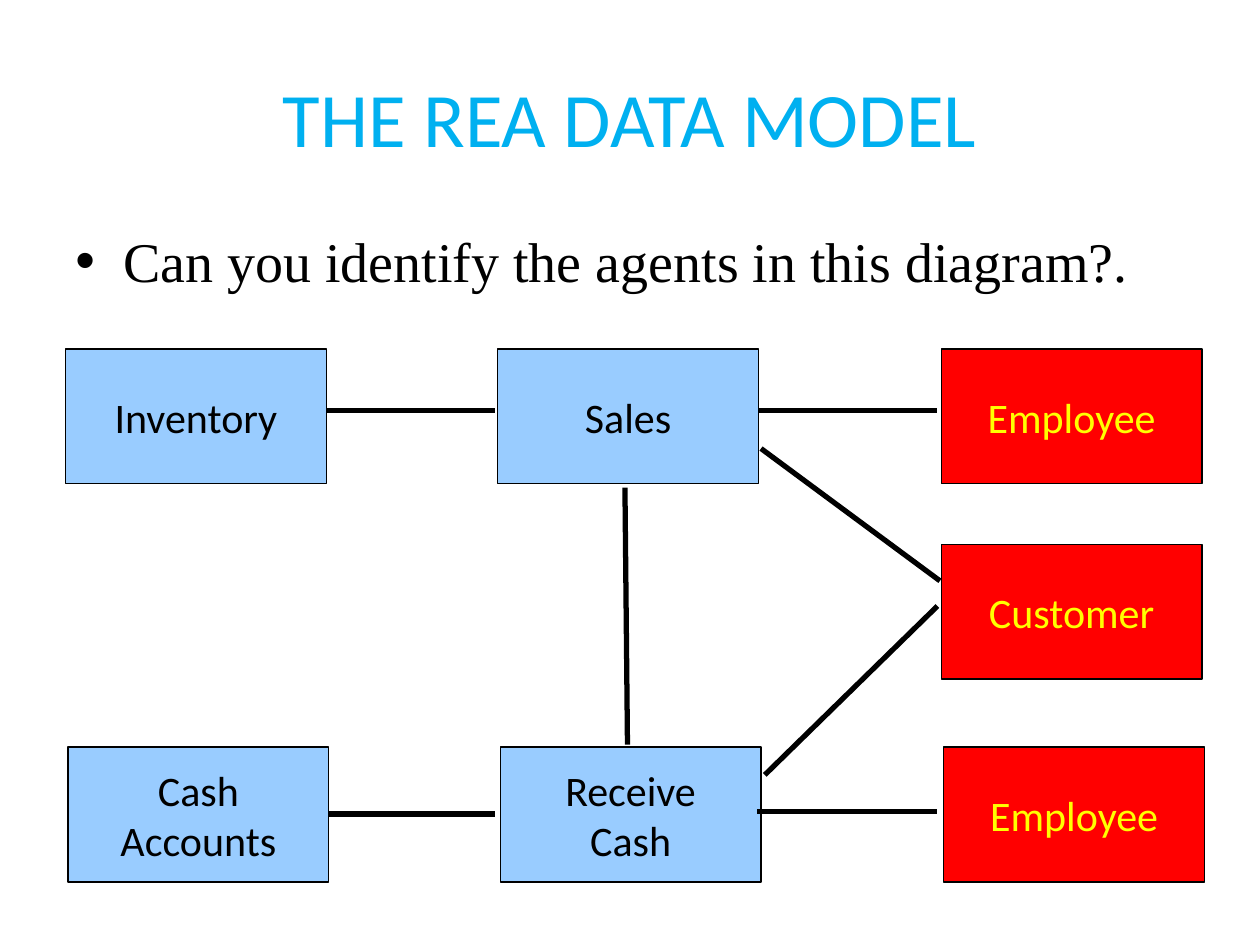
from lxml.etree import SubElement as Sub
from pptx import Presentation
from pptx.dml.color import RGBColor as RGB
from pptx.enum.shapes import MSO_CONNECTOR as Link, MSO_SHAPE as Form
from pptx.enum.text import MSO_ANCHOR as Anchor, PP_ALIGN as Align
from pptx.oxml.ns import qn
from pptx.util import Inches as In, Pt

INK = {"title": "00B0F0", "text": "000000", "line": "000000",
       "agent": "FF0000", "event": "99CCFF", "label": "FFFF00"}
COLS = [0.52, 3.95, 7.47]
ROWS = [2.77, 4.32, 5.93]
WIDE, HIGH = 2.07, 1.07
SHIFT = 0.02


def write(frame, text, size, font, ink, align):
    frame.text = text
    frame.vertical_anchor = Anchor.MIDDLE
    for para in frame.paragraphs:
        para.alignment = align
        for run in para.runs:
            run.font.size = Pt(size)
            run.font.name = font
            run.font.color.rgb = RGB.from_string(INK[ink])


deck = Presentation()
deck.slide_width, deck.slide_height = In(10), In(7.5)
slide = deck.slides.add_slide(deck.slide_layouts[6])
shapes = slide.shapes

head = shapes.add_textbox(In(0.5), In(0.3), In(9), In(1.25)).text_frame
head.word_wrap = True
write(head, "THE REA DATA MODEL", 44, "Calibri", "title", Align.CENTER)

body = shapes.add_textbox(In(0.5), In(1.75), In(9), In(0.76)).text_frame
body.word_wrap = True
write(body, "Can you identify the agents in this diagram?.", 32,
      "Times New Roman", "text", Align.LEFT)
body.vertical_anchor = Anchor.TOP
props = body.paragraphs[0]._p.get_or_add_pPr()
props.set("marL", str(In(0.38)))
props.set("indent", str(-In(0.38)))
space = Sub(props, qn("a:spcBef"))
Sub(space, qn("a:spcPct")).set("val", "20000")
Sub(props, qn("a:buFont")).set("typeface", "Arial")
Sub(props, qn("a:buChar")).set("char", "•")

boxes = [
    ("Employee", 2, 0, "agent"),
    ("Customer", 2, 1, "agent"),
    ("Employee", 2, 2, "agent"),
    ("Sales", 1, 0, "event"),
    ("Receive\nCash", 1, 2, "event"),
    ("Inventory", 0, 0, "event"),
    ("Cash\nAccounts", 0, 2, "event"),
]
for text, col, row, kind in boxes:
    left = COLS[col] + (SHIFT if row == 2 else 0)
    box = shapes.add_shape(Form.RECTANGLE, In(left), In(ROWS[row]),
                           In(WIDE), In(HIGH))
    box.shadow.inherit = False
    box.fill.solid()
    box.fill.fore_color.rgb = RGB.from_string(INK[kind])
    box.line.color.rgb = RGB.from_string(INK["line"])
    box.line.width = Pt(0.75)
    box.text_frame.word_wrap = False
    ink = "label" if kind == "agent" else "text"
    write(box.text_frame, text, 24, "Calibri", ink, Align.CENTER)

links = [
    (6.02, 3.26, 7.44, 3.26),
    (6.01, 6.44, 7.44, 6.44),
    (6.07, 6.15, 7.44, 4.81),
    (4.96, 3.87, 4.98, 5.91),
    (2.59, 3.26, 3.93, 3.26),
    (2.61, 6.46, 3.93, 6.46),
    (6.04, 3.56, 7.46, 4.61),
]
for ends in links:
    link = shapes.add_connector(Link.STRAIGHT, *map(In, ends))
    link.line.color.rgb = RGB.from_string(INK["line"])
    link.line.width = Pt(3)
    Sub(link._element.spPr, qn("a:effectLst"))

deck.save("out.pptx")
